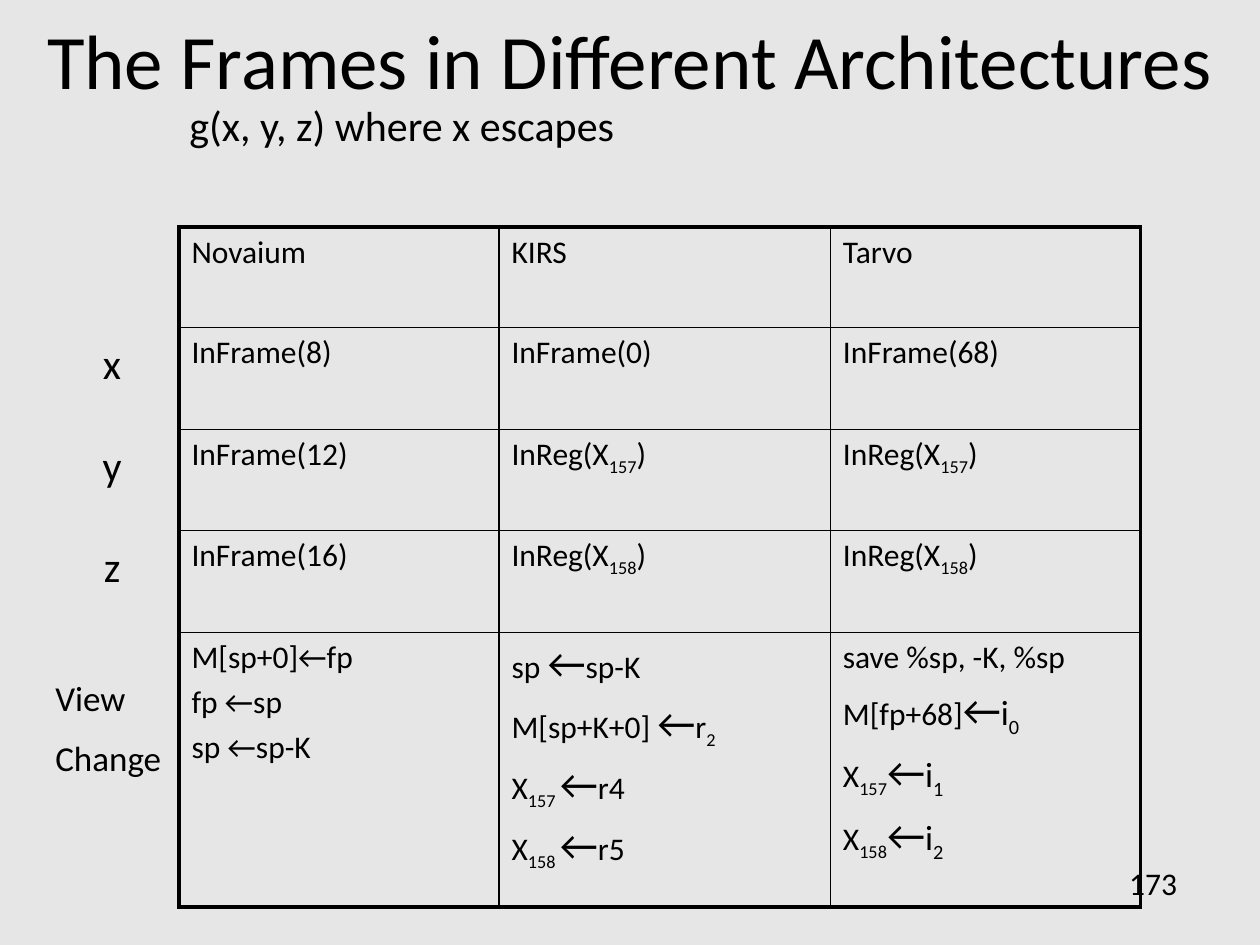
import itertools

import pptx
import pptx.dml.color
import pptx.enum.text
import pptx.oxml.ns
import pptx.util
from lxml import etree

Inches, Pt = pptx.util.Inches, pptx.util.Pt
ALIGN = pptx.enum.text.PP_ALIGN
ANCHOR = pptx.enum.text.MSO_ANCHOR
qn = pptx.oxml.ns.qn

COLORS = {"background": "E6E6E6", "ink": "000000"}
FONT = "Calibri"
OUTER, INNER = 2.25, 1  # border widths in points

# Run styles: size in points (None keeps the base size) and subscript
STYLES = {
    "plain": (None, False),
    "sub": (None, True),
    "arrow": (24, False),
    "reg": (20, False),
    "regsub": (20, True),
}
ARROW = ("←", "arrow")


def in_reg(number):
    return [["InReg(X", (number, "sub"), ")"]]


def to_input(number, index):
    return ["X", (number, "sub"), ARROW, ("i", "reg"), (index, "regsub")]


# A cell is a list of paragraphs, a paragraph a list of runs
TABLE = [
    [[["Novaium"]], [["KIRS"]], [["Tarvo"]]],
    [[["InFrame(8)"]], [["InFrame(0)"]], [["InFrame(68)"]]],
    [[["InFrame(12)"]], in_reg("157"), in_reg("157")],
    [[["InFrame(16)"]], in_reg("158"), in_reg("158")],
    [
        [["M[sp+0]←fp"], ["fp ←sp"], ["sp ←sp-K"]],
        [
            ["sp ", ARROW, "sp-K"],
            ["M[sp+K+0] ", ARROW, "r", ("2", "sub")],
            ["X", ("157 ", "sub"), ARROW, "r4"],
            ["X", ("158 ", "sub"), ARROW, "r5"],
        ],
        [
            ["save %sp, -K, %sp"],
            ["M[fp+68]", ARROW, ("i", "reg"), ("0", "regsub")],
            to_input("157", "1"),
            to_input("158", "2"),
        ],
    ],
]
LEFT, TOP = 1.42, 1.8
COLS = [2.54, 2.63, 2.46]
ROWS = [0.8, 0.81, 0.8, 0.81, 2.18]
row_tops = list(itertools.accumulate(ROWS, initial=TOP))

# Box (left, top, width, height), lines, format
TEXTS = [
    ((0, -0.16, 10, 1.25), ["The Frames in Different Architectures"],
     {"size": 44, "anchor": ANCHOR.MIDDLE}),
    ((7.36, 6.81, 2.08, 0.5), ["173"], {"size": 18, "align": ALIGN.RIGHT}),
    ((0.22, 0.74, 5.94, 0.5), ["g(x, y, z) where x escapes"], {"size": 24}),
    ((0.34, 5.32, 1.15, 0.93), ["View", "Change"],
     {"size": 20, "align": ALIGN.LEFT, "before": 50}),
]
TEXTS += [
    ((0.71, top + 0.03, 0.36, 0.5), [name], {"size": 24})
    for name, top in zip("xyz", row_tops[1:])
]


def write(tf, paragraphs, size, align=ALIGN.CENTER, anchor=ANCHOR.TOP, before=0):
    """Fill a text frame; before is the paragraph spacing in percent of a line."""
    tf.word_wrap = True
    tf.vertical_anchor = anchor
    for i, runs in enumerate(paragraphs):
        p = tf.add_paragraph() if i else tf.paragraphs[0]
        p.alignment = align
        if before:
            space = etree.SubElement(p._p.get_or_add_pPr(), qn("a:spcBef"))
            etree.SubElement(space, qn("a:spcPct"), val=str(before * 1000))
        for run in runs:
            text, style = (run, "plain") if isinstance(run, str) else run
            own_size, subscript = STYLES[style]
            r = p.add_run()
            r.text = text
            for key, value in {"name": FONT, "size": Pt(own_size or size)}.items():
                setattr(r.font, key, value)
            r.font.color.rgb = pptx.dml.color.RGBColor.from_string(COLORS["ink"])
            if subscript:
                r._r.get_or_add_rPr().set("baseline", "-25000")


def set_borders(cell, widths):
    tcPr = cell._tc.get_or_add_tcPr()
    for i, (side, width) in enumerate(widths.items()):
        ln = etree.Element(qn("a:ln" + side), w=str(Pt(width)))
        fill = etree.SubElement(ln, qn("a:solidFill"))
        etree.SubElement(fill, qn("a:srgbClr"), val=COLORS["ink"])
        tcPr.insert(i, ln)


def add_frame_table(s):
    shape = s.shapes.add_table(len(ROWS), len(COLS), Inches(LEFT), Inches(TOP),
                               Inches(sum(COLS)), Inches(sum(ROWS)))
    table = shape.table
    table.first_row = table.horz_banding = False
    for column, width in zip(table.columns, COLS):
        column.width = Inches(width)
    for row, height in zip(table.rows, ROWS):
        row.height = Inches(height)
    for i, j in itertools.product(range(len(ROWS)), range(len(COLS))):
        cell = table.cell(i, j)
        write(cell.text_frame, TABLE[i][j], 18, ALIGN.LEFT, before=20)
        cell.fill.background()
        edges = {"L": j == 0, "R": j == len(COLS) - 1,
                 "T": i == 0, "B": i == len(ROWS) - 1}
        set_borders(cell, {k: OUTER if edge else INNER for k, edge in edges.items()})


def main():
    prs = pptx.Presentation()
    prs.slide_width, prs.slide_height = Inches(10), Inches(7.5)
    s = prs.slides.add_slide(prs.slide_layouts[6])
    fill = s.background.fill
    fill.solid()
    fill.fore_color.rgb = pptx.dml.color.RGBColor.from_string(COLORS["background"])
    add_frame_table(s)
    for box, lines, style in TEXTS:
        sp = s.shapes.add_textbox(*map(Inches, box))
        write(sp.text_frame, [[line] for line in lines], **style)
    prs.save("out.pptx")


if __name__ == "__main__":
    main()
